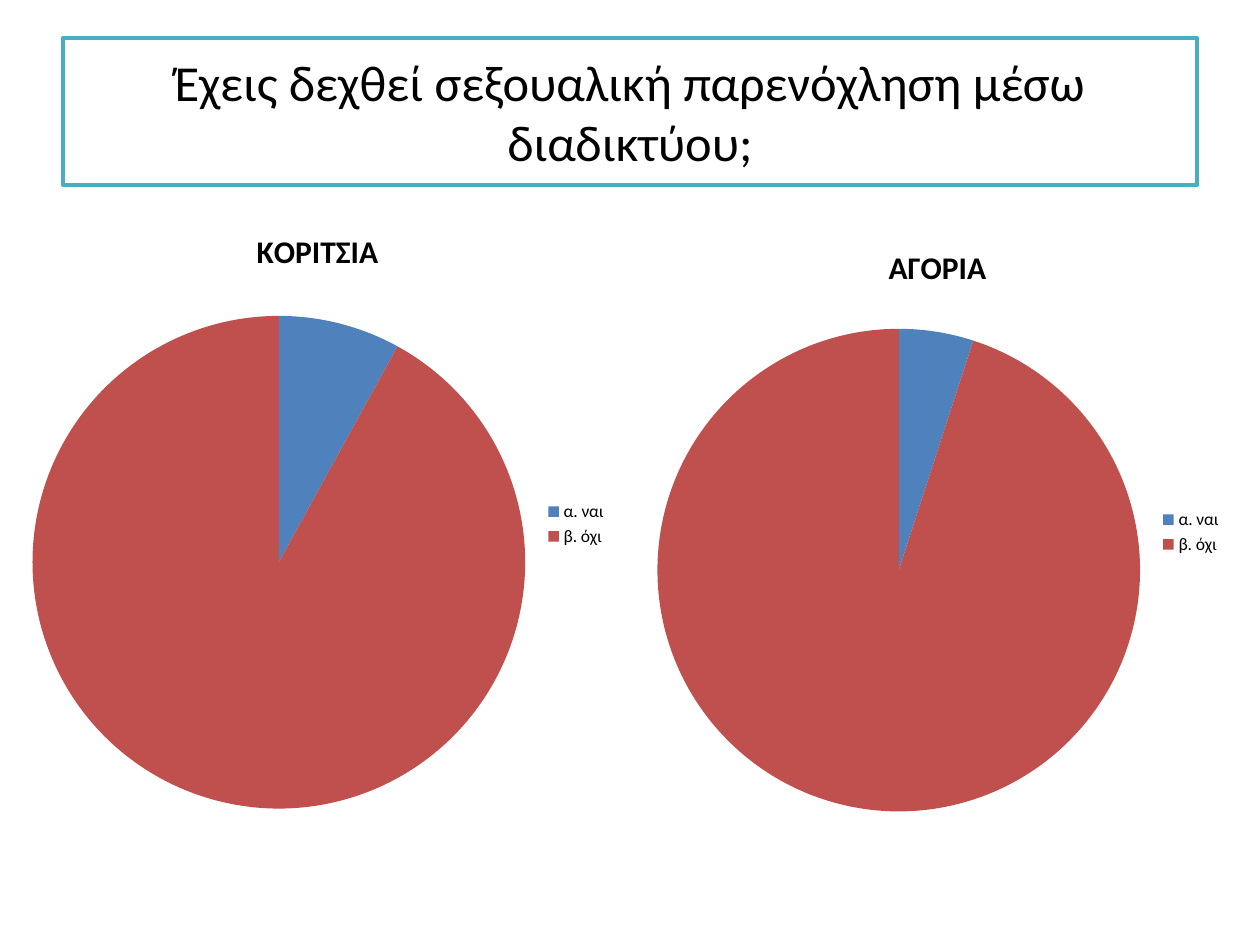
from pptx import Presentation
from pptx import util as u
from pptx.chart.data import CategoryChartData
from pptx.dml.color import RGBColor
from pptx.enum import chart as charts, text

WIDTH, HEIGHT = 10, 7.5
FONT = "Calibri"
COLORS = {"paper": "FFFFFF", "ink": "000000", "frame": "4BACC6",
          "yes": "4F81BD", "no": "C0504D"}
ANSWERS = {"α. ναι": "yes", "β. όχι": "no"}
QUESTION = "Έχεις δεχθεί σεξουαλική παρενόχληση μέσω διαδικτύου;"


def color(name):
    return RGBColor.from_string(COLORS[name])


def place(box):
    """Turn shares of the slide (left, top, width, height) into lengths."""
    return [u.Inches(share * side) for share, side in zip(box, (WIDTH, HEIGHT) * 2)]


def style_font(font, size, bold=False):
    font.name = FONT
    font.size = u.Pt(size)
    font.bold = bold
    font.color.rgb = color("ink")


def add_question(page, box):
    title = page.shapes.title
    title.left, title.top, title.width, title.height = place(box)
    title.fill.solid()
    title.fill.fore_color.rgb = color("paper")
    title.line.color.rgb = color("frame")
    title.line.width = u.Pt(2)
    frame = title.text_frame
    frame.text = QUESTION
    frame.word_wrap = True
    frame.auto_size = text.MSO_AUTO_SIZE.NONE
    frame.vertical_anchor = text.MSO_ANCHOR.MIDDLE
    para = frame.paragraphs[0]
    para.alignment = text.PP_ALIGN.CENTER
    style_font(para.font, 28.8)


def add_answer_pie(page, box, group, values):
    data = CategoryChartData()
    data.categories = list(ANSWERS)
    data.add_series("Series 1", values)
    pie = page.shapes.add_chart(charts.XL_CHART_TYPE.PIE, *place(box), data).chart
    style_font(pie.font, 10)

    pie.has_title = True
    heading = pie.chart_title.text_frame
    heading.text = group
    style_font(heading.paragraphs[0].font, 18, bold=True)
    pie.chart_title.include_in_layout = False

    pie.has_legend = True
    pie.legend.position = charts.XL_LEGEND_POSITION.RIGHT
    pie.legend.include_in_layout = False

    plot = pie.plots[0]
    plot.vary_by_categories = True
    for index, name in enumerate(ANSWERS.values()):
        fill = plot.series[0].points[index].format.fill
        fill.solid()
        fill.fore_color.rgb = color(name)


def main():
    deck = Presentation()
    deck.slide_width, deck.slide_height = u.Inches(WIDTH), u.Inches(HEIGHT)
    page = deck.slides.add_slide(deck.slide_layouts[5])
    add_question(page, (0.05, 0.04, 0.9, 0.156))
    add_answer_pie(page, (0.012, 0.216, 0.48, 0.677), "ΚΟΡΙΤΣΙΑ", (8, 92))
    add_answer_pie(page, (0.508, 0.233, 0.472, 0.66), "ΑΓΟΡΙΑ", (5, 95))
    deck.save("out.pptx")


if __name__ == "__main__":
    main()
